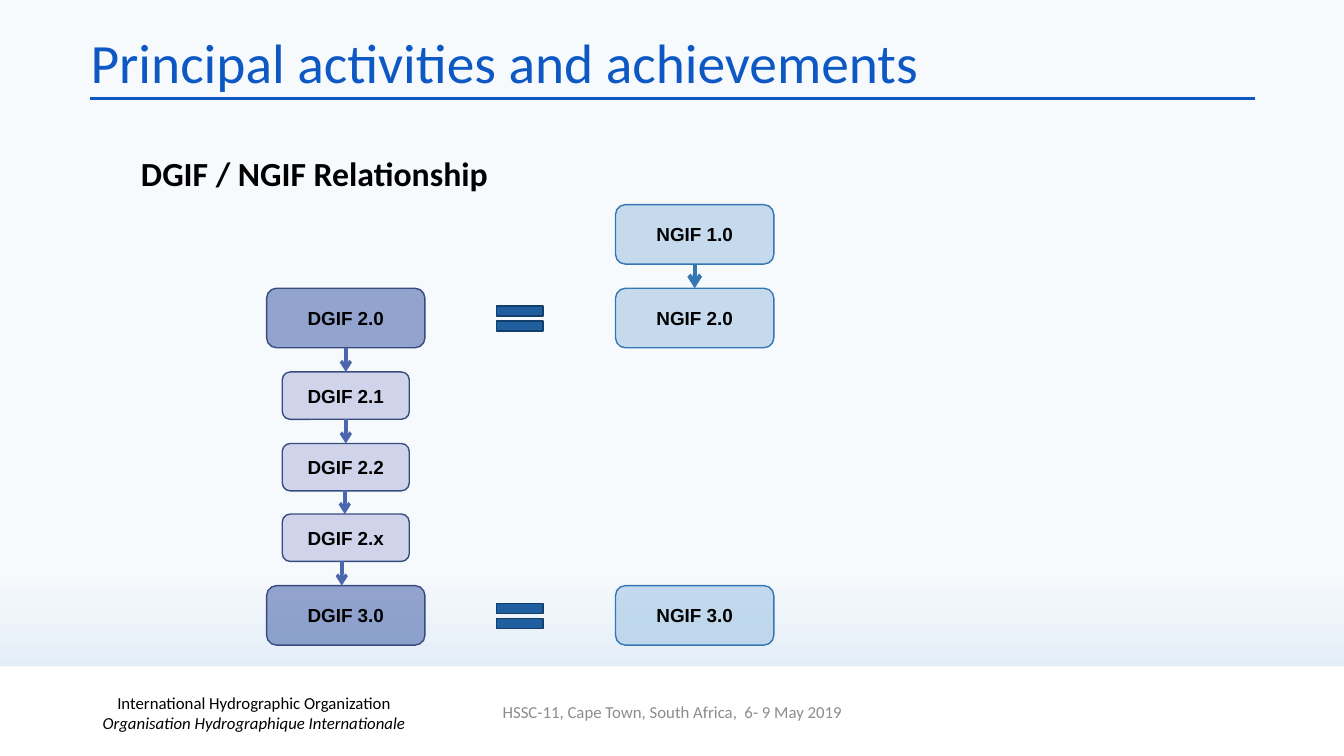
from lxml import etree
from pptx import Presentation
from pptx.dml.color import RGBColor
from pptx.enum.shapes import MSO_CONNECTOR as Connector, MSO_SHAPE as Preset
from pptx.enum.text import MSO_ANCHOR as Anchor, PP_ALIGN as Align
from pptx.oxml.ns import qn
from pptx.util import Inches, Pt

BLACK = RGBColor(0x00, 0x00, 0x00)
WHITE = RGBColor(0xFF, 0xFF, 0xFF)
GREY = RGBColor(0x8C, 0x8C, 0x8C)
TITLE_BLUE = RGBColor(0x0E, 0x58, 0xC4)
SKY_TOP = RGBColor(0xF7, 0xFA, 0xFD)
SKY_BOTTOM = RGBColor(0xD0, 0xE2, 0xF1)
NGIF_FILL = RGBColor(0xA1, 0xC4, 0xE3)
NGIF_LINE = RGBColor(0x34, 0x77, 0xB2)
DGIF_FILL = RGBColor(0x4A, 0x66, 0xAC)
DGIF_LINE = RGBColor(0x37, 0x4B, 0x7F)
MINOR_FILL = RGBColor(0x92, 0x97, 0xCF)
EQUAL_FILL = RGBColor(0x1F, 0x5F, 0xA0)
EQUAL_LINE = RGBColor(0x14, 0x3F, 0x6A)

# Fill, opacity in percent, line, width, height
MAJOR_NGIF = (NGIF_FILL, 58, NGIF_LINE, 1.57, 0.59)
MAJOR_DGIF = (DGIF_FILL, 58, DGIF_LINE, 1.57, 0.59)
MINOR_DGIF = (MINOR_FILL, 38, DGIF_LINE, 1.26, 0.47)


class SlideBuilder:
    body_font = "Calibri"
    box_font = {"name": "Arial", "size": Pt(13.5), "bold": True}

    def __init__(self, slide):
        self.slide = slide

    def background(self, stops):
        fill = self.slide.background.fill
        fill.gradient()
        fill.gradient_angle = 270
        for stop, (position, color) in zip(fill.gradient_stops, stops):
            stop.position = position
            stop.color.rgb = color

    def styled_run(self, paragraph, text, color=BLACK, **font_values):
        run = paragraph.add_run()
        run.text = text
        for name, value in font_values.items():
            setattr(run.font, name, value)
        run.font.color.rgb = color

    def text(self, bounds, lines, size, color=BLACK, align=Align.LEFT, spacing=None):
        """Each line is a pair of text and extra font values."""
        box = self.slide.shapes.add_textbox(*map(Inches, bounds))
        frame = box.text_frame
        frame.word_wrap = True
        frame.vertical_anchor = Anchor.MIDDLE
        paragraph = frame.paragraphs[0]
        paragraph.alignment = align
        paragraph.line_spacing = spacing
        for index, (text, extra) in enumerate(lines):
            if index:
                paragraph.add_line_break()
            self.styled_run(paragraph, text, color,
                            name=self.body_font, size=Pt(size), **extra)

    def shape(self, preset, bounds, fill, line=None):
        shape = self.slide.shapes.add_shape(preset, *map(Inches, bounds))
        shape.shadow.inherit = False
        shape.fill.solid()
        shape.fill.fore_color.rgb = fill
        if line is None:
            shape.line.fill.background()
        else:
            shape.line.color.rgb = line
            shape.line.width = Pt(1)
        return shape

    def version_box(self, label, center, top, style):
        fill, opacity, line, width, height = style
        bounds = (center - width / 2, top, width, height)
        shape = self.shape(Preset.ROUNDED_RECTANGLE, bounds, fill, line)
        color = shape._element.spPr.find(qn("a:solidFill"))[0]
        etree.SubElement(color, qn("a:alpha"), val=str(opacity * 1000))
        frame = shape.text_frame
        frame.vertical_anchor = Anchor.MIDDLE
        frame.paragraphs[0].alignment = Align.CENTER
        self.styled_run(frame.paragraphs[0], label, **self.box_font)

    def line(self, start, end, color, width, arrow=False):
        line = self.slide.shapes.add_connector(
            Connector.STRAIGHT, *map(Inches, (*start, *end)))
        line.line.color.rgb = color
        line.line.width = Pt(width)
        properties = line._element.spPr
        if arrow:
            etree.SubElement(properties.find(qn("a:ln")), qn("a:tailEnd"), type="arrow")
        etree.SubElement(properties, qn("a:effectLst"))


def main():
    presentation = Presentation()
    presentation.slide_width = Inches(13.33)
    presentation.slide_height = Inches(7.5)
    slide = presentation.slides.add_slide(presentation.slide_layouts[6])
    builder = SlideBuilder(slide)

    # Background, title rule and footer band
    builder.background([(0.75, SKY_TOP), (1, SKY_BOTTOM)])
    builder.line((0.89, 0.98), (12.45, 0.98), TITLE_BLUE, 2.25)
    builder.shape(Preset.RECTANGLE, (0, 6.61, 13.33, 0.89), WHITE)

    # Footer texts
    builder.text((0.27, 6.87, 4.5, 0.4),
                 [("International Hydrographic Organization", {}),
                  ("Organisation Hydrographique Internationale", {"italic": True})],
                 12, align=Align.CENTER)
    builder.text((4.42, 6.86, 4.5, 0.4),
                 [("HSSC-11, Cape Town, South Africa,  6- 9 May 2019", {})],
                 12, GREY, Align.CENTER)

    # Title and heading
    builder.text((0.8, 0.3, 9.82, 0.7),
                 [("Principal activities and achievements", {})],
                 39.6, TITLE_BLUE, spacing=0.9)
    builder.text((1.3, 1.46, 8.12, 0.51),
                 [("DGIF / NGIF Relationship", {"bold": True})], 24.1)

    # Version boxes
    ngif_center, dgif_center = 6.89, 3.43
    for label, top in (("NGIF 1.0", 2.03), ("NGIF 2.0", 2.86), ("NGIF 3.0", 5.81)):
        builder.version_box(label, ngif_center, top, MAJOR_NGIF)
    for label, top, style in (("DGIF 2.0", 2.86, MAJOR_DGIF),
                              ("DGIF 2.1", 3.69, MINOR_DGIF),
                              ("DGIF 2.2", 4.4, MINOR_DGIF),
                              ("DGIF 2.x", 5.1, MINOR_DGIF),
                              ("DGIF 3.0", 5.81, MAJOR_DGIF)):
        builder.version_box(label, dgif_center, top, style)

    # Arrows from one version to the next
    arrow_length = 0.24
    for x, top in ((3.43, 3.45), (3.43, 4.16), (3.42, 4.86), (3.39, 5.57)):
        builder.line((x, top), (x, top + arrow_length), DGIF_FILL, 2.5, arrow=True)
    builder.line((ngif_center, 2.62), (ngif_center, 2.62 + arrow_length),
                 NGIF_LINE, 3, arrow=True)

    # Equal signs between matching versions
    for top in (2.95, 5.9):
        builder.shape(Preset.MATH_EQUAL, (4.84, top, 0.63, 0.42), EQUAL_FILL, EQUAL_LINE)

    presentation.save("out.pptx")


if __name__ == "__main__":
    main()
